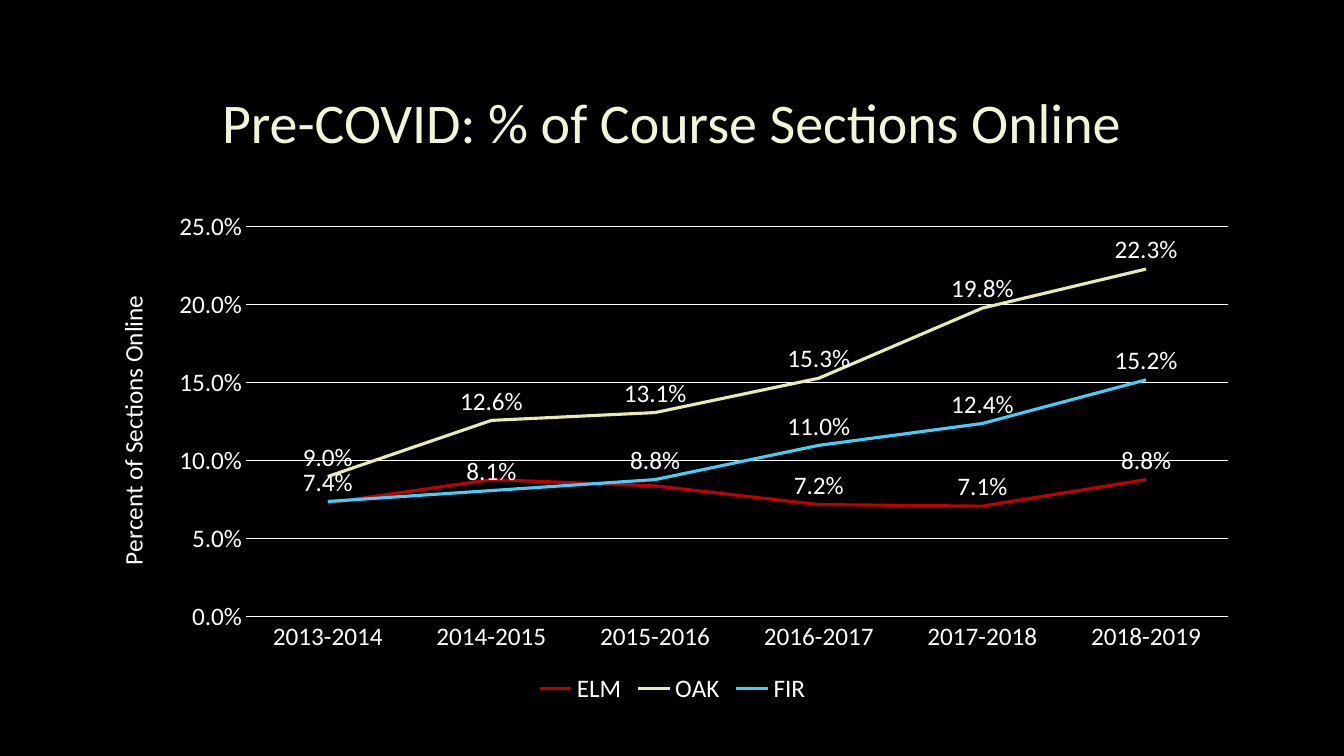
import pptx
import pptx.chart.data
import pptx.dml.color
import pptx.enum.chart
import pptx.enum.text
import pptx.oxml
import pptx.oxml.ns
import pptx.util

RGBColor = pptx.dml.color.RGBColor
BLACK = RGBColor(0x00, 0x00, 0x00)
WHITE = RGBColor(0xFF, 0xFF, 0xFF)
CREAM = RGBColor(0xF2, 0xF5, 0xD7)
RED = RGBColor(0xC0, 0x00, 0x00)
LIME = RGBColor(0xE6, 0xEC, 0xB0)
BLUE = RGBColor(0x46, 0xCC, 0xF6)

TITLE = "Pre-COVID: % of Course Sections Online"
AXIS_TITLE = "Percent of Sections Online"
YEARS = ["2013-2014", "2014-2015", "2015-2016", "2016-2017", "2017-2018", "2018-2019"]
COLLEGES = [
    ("ELM", RED, [0.073, 0.088, 0.084, 0.072, 0.071, 0.088], [0, 1, 2]),
    ("OAK", LIME, [0.09, 0.126, 0.131, 0.153, 0.198, 0.223], []),
    ("FIR", BLUE, [0.074, 0.081, 0.088, 0.11, 0.124, 0.152], []),
]
PERCENT = "0.0%"

SLIDE_SIZE = (1344, 756)
TITLE_BOX = (101, 68, 1141, 107)
CHART_BOX = (93, 202, 1159, 507)
PLOT_BOX = (246, 227, 982, 390)
AXIS_TITLE_SPOT = (111, 291)

CHART_TEXT = {"name": "Calibri", "size": pptx.util.Pt(18), "bold": False}
TITLE_TEXT = {"name": "Calibri", "size": pptx.util.Pt(40), "bold": False}
LABELS = {
    "show_value": True,
    "number_format": PERCENT,
    "number_format_is_linked": False,
    "position": pptx.enum.chart.XL_LABEL_POSITION.ABOVE,
}
VALUE_AXIS = {
    "minimum_scale": 0,
    "maximum_scale": 0.25,
    "major_unit": 0.05,
    "has_major_gridlines": True,
}
TICKS = {
    "major_tick_mark": pptx.enum.chart.XL_TICK_MARK.NONE,
    "minor_tick_mark": pptx.enum.chart.XL_TICK_MARK.NONE,
}


def px(length):
    return round(length * 914400 / 100.8)


def apply(target, values):
    for name, value in values.items():
        setattr(target, name, value)


def style_font(font, values, color):
    apply(font, values)
    font.color.rgb = color


def style_line(line, color, points):
    line.color.rgb = color
    line.width = pptx.util.Pt(points)


def chart_xml(body):
    return pptx.oxml.parse_xml(body.replace(">", " " + pptx.oxml.ns.nsdecls("c") + ">", 1))


def place(element, index, spot, inner=False):
    for old in element.findall(pptx.oxml.ns.qn("c:layout")):
        element.remove(old)
    left, top, width, height = CHART_BOX
    parts = ['<c:layoutTarget val="inner"/>'] if inner else []
    parts += [f'<c:{axis}Mode val="edge"/>' for axis in "xy"]
    fractions = [(spot[0] - left) / width, (spot[1] - top) / height]
    fractions += [size / whole for size, whole in zip(spot[2:], (width, height))]
    parts += [f'<c:{name} val="{value:.4f}"/>' for name, value in zip("xywh", fractions)]
    body = "".join(parts)
    element.insert(index, chart_xml(f"<c:layout><c:manualLayout>{body}</c:manualLayout></c:layout>"))


def add_title(page):
    title = page.shapes.title
    apply(title, dict(zip(("left", "top", "width", "height"), map(px, TITLE_BOX))))
    frame = title.text_frame
    frame.text = TITLE
    frame.word_wrap = True
    frame.vertical_anchor = pptx.enum.text.MSO_ANCHOR.MIDDLE
    para = frame.paragraphs[0]
    para.alignment = pptx.enum.text.PP_ALIGN.CENTER
    style_font(para.runs[0].font, TITLE_TEXT, CREAM)


def style_axes(chart):
    years, shares = chart.category_axis, chart.value_axis
    for axis in (years, shares):
        apply(axis, TICKS)
        style_font(axis.tick_labels.font, CHART_TEXT, WHITE)
    style_line(years.format.line, WHITE, 0.75)
    apply(shares, VALUE_AXIS)
    apply(shares.tick_labels, {"number_format": PERCENT, "number_format_is_linked": False})
    shares.format.line.fill.background()
    style_line(shares.major_gridlines.format.line, WHITE, 0.75)

    frame = shares.axis_title.text_frame
    frame.text = AXIS_TITLE
    style_font(frame.paragraphs[0].runs[0].font, CHART_TEXT, WHITE)
    turn = frame._txBody.find(pptx.oxml.ns.qn("a:bodyPr"))
    turn.set("rot", "-5400000")
    turn.set("vert", "horz")
    place(shares.axis_title._element, 1, AXIS_TITLE_SPOT)


def add_chart(page):
    data = pptx.chart.data.CategoryChartData(number_format=PERCENT)
    data.categories = YEARS
    for name, color, shares, hidden in COLLEGES:
        data.add_series(name, shares)
    kind = pptx.enum.chart.XL_CHART_TYPE.LINE
    chart = page.shapes.add_chart(kind, *map(px, CHART_BOX), data).chart
    style_font(chart.font, CHART_TEXT, WHITE)
    apply(chart, {"has_title": False, "has_legend": True})
    apply(chart.legend, {
        "position": pptx.enum.chart.XL_LEGEND_POSITION.BOTTOM,
        "include_in_layout": False,
    })
    style_font(chart.legend.font, CHART_TEXT, WHITE)
    style_axes(chart)
    chart.plots[0].vary_by_categories = False
    for series, (name, color, shares, hidden) in zip(chart.plots[0].series, COLLEGES):
        series.smooth = False
        series.marker.style = pptx.enum.chart.XL_MARKER_STYLE.NONE
        style_line(series.format.line, color, 2.25)
        labels = series.data_labels
        apply(labels, LABELS)
        style_font(labels.font, CHART_TEXT, WHITE)
        for index in hidden:
            body = f'<c:dLbl><c:idx val="{index}"/><c:delete val="1"/></c:dLbl>'
            labels._element.insert(index, chart_xml(body))
    area = chart._chartSpace.find(".//" + pptx.oxml.ns.qn("c:plotArea"))
    place(area, 0, PLOT_BOX, inner=True)


def main():
    deck = pptx.Presentation()
    deck.slide_width, deck.slide_height = map(px, SLIDE_SIZE)
    page = deck.slides.add_slide(deck.slide_layouts[5])
    page.background.fill.solid()
    page.background.fill.fore_color.rgb = BLACK
    add_title(page)
    add_chart(page)
    deck.save("out.pptx")


if __name__ == "__main__":
    main()
